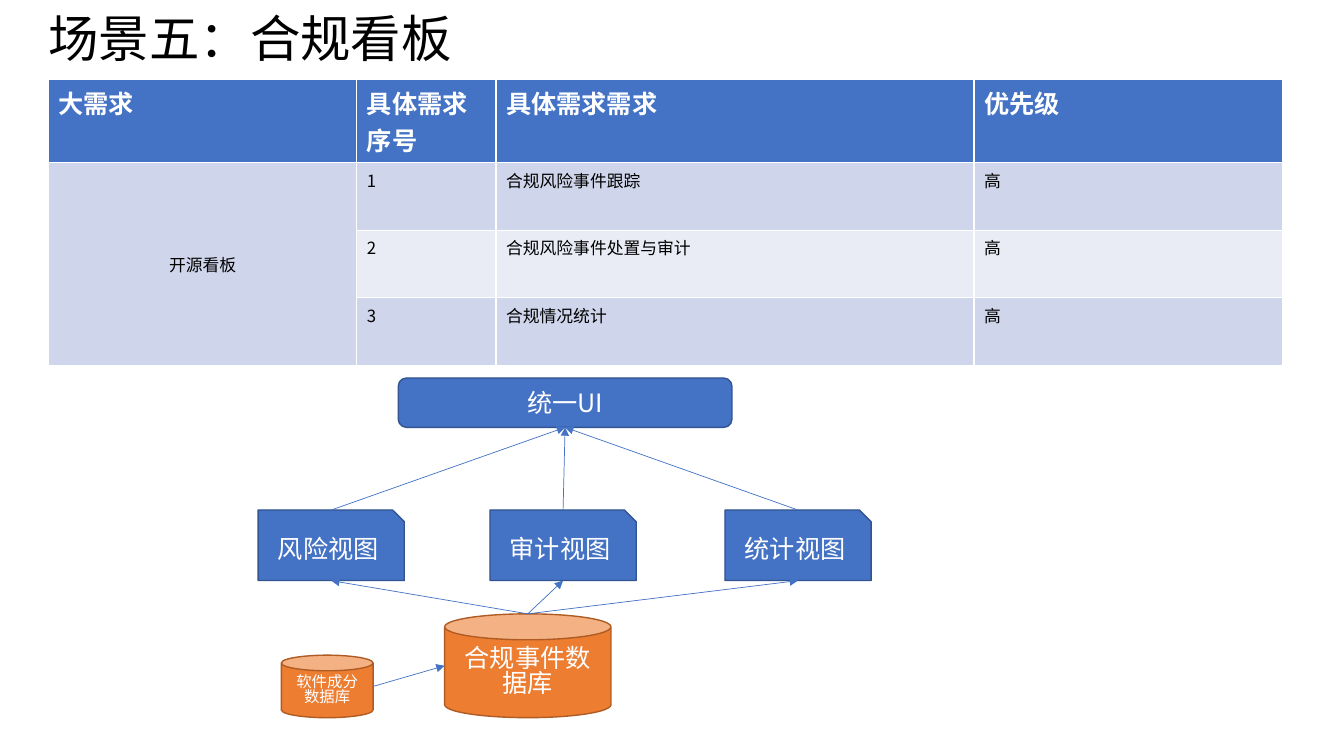
from dataclasses import dataclass

from lxml import etree
from pptx import Presentation
from pptx.dml.color import RGBColor
from pptx.enum import shapes, text
from pptx.oxml import ns
from pptx.util import Inches, Pt


@dataclass(frozen=True)
class Theme:
    """Colours, font and type sizes of the slide."""
    font: str = "Noto Sans CJK SC"
    blue: str = "4472C4"
    blue_edge: str = "325491"
    orange: str = "ED7D31"
    orange_edge: str = "AF5C24"
    bands: tuple = ("CFD5EA", "E9EBF5")
    black: str = "000000"
    white: str = "FFFFFF"
    title: int = 36
    body: int = 18
    cell: int = 12
    small: int = 11


THEME = Theme()
HEADERS = ["大需求", "具体需求序号", "具体需求需求", "优先级"]
NEEDS = ["合规风险事件跟踪", "合规风险事件处置与审计", "合规情况统计"]
VIEWS = [("风险视图", 2.56), ("审计视图", 4.86), ("统计视图", 7.19)]


def rgb(value):
    """Turn a hex string into a colour."""
    return RGBColor.from_string(value)


def write(frame, wording, size, color, align=None, bold=False, spacing=None):
    """Put one formatted paragraph into a text frame."""
    frame.text = wording
    paragraph = frame.paragraphs[0]
    paragraph.alignment = align
    paragraph.line_spacing = spacing
    font = paragraph.font
    font.name, font.size, font.bold = THEME.font, Pt(size), bold
    font.color.rgb = rgb(color)
    latin = paragraph._p.pPr.find(".//" + ns.qn("a:latin"))
    east_asian = etree.Element(ns.qn("a:ea"), typeface=THEME.font)
    latin.addnext(east_asian)


def add_title(slide, wording):
    """Place and format the slide title."""
    title = slide.shapes.title
    title.left, title.top = Inches(0.38), Inches(0.03)
    title.width, title.height = Inches(11.5), Inches(0.76)
    title.text_frame.vertical_anchor = text.MSO_ANCHOR.MIDDLE
    write(title.text_frame, wording, THEME.title, THEME.black,
          text.PP_ALIGN.LEFT, spacing=0.9)


def fill_cell(cell, wording, size, text_color, fill, **style):
    """Fill a table cell and write its wording."""
    cell.fill.solid()
    cell.fill.fore_color.rgb = rgb(fill)
    write(cell.text_frame, wording, size, text_color, **style)


def add_needs(slide):
    """Add the table of requirements."""
    table = slide.shapes.add_table(
        len(NEEDS) + 1, len(HEADERS), Inches(0.48), Inches(0.79),
        Inches(12.24), Inches(2.56)).table
    for column, width in zip(table.columns, (3.06, 1.38, 4.74, 3.06)):
        column.width = Inches(width)
    for row, height in zip(table.rows, (0.55, 0.67, 0.67, 0.67)):
        row.height = Inches(height)
    for column, header in enumerate(HEADERS):
        fill_cell(table.cell(0, column), header, THEME.body, THEME.white,
                  THEME.blue, bold=True)
    for number, need in enumerate(NEEDS, 1):
        band = THEME.bands[(number - 1) % 2]
        for column, wording in enumerate((str(number), need, "高"), 1):
            fill_cell(table.cell(number, column), wording, THEME.cell,
                      THEME.black, band)
    topic = table.cell(1, 0)
    topic.merge(table.cell(len(NEEDS), 0))
    topic.vertical_anchor = text.MSO_ANCHOR.MIDDLE
    fill_cell(topic, "开源看板", THEME.cell, THEME.black, THEME.bands[0],
              align=text.PP_ALIGN.CENTER)


def add_node(slide, kind, wording, box, fill, edge, size=THEME.body, spacing=None):
    """Add one labelled shape of the diagram."""
    node = slide.shapes.add_shape(kind, *map(Inches, box))
    node.shadow.inherit = False
    node.fill.solid()
    node.fill.fore_color.rgb = rgb(fill)
    node.line.color.rgb = rgb(edge)
    node.line.width = Pt(1)
    node.text_frame.word_wrap = True
    node.text_frame.vertical_anchor = text.MSO_ANCHOR.MIDDLE
    write(node.text_frame, wording, size, THEME.white,
          text.PP_ALIGN.CENTER, spacing=spacing)
    return node


def add_database(slide, wording, box, size):
    """Add a database can."""
    return add_node(slide, shapes.MSO_SHAPE.CAN, wording, box, THEME.orange,
                    THEME.orange_edge, size, 0.82)


def side(node, across, down):
    """Give the point at a fraction of a node's width and height."""
    return (node.left + round(node.width * across),
            node.top + round(node.height * down))


def add_arrow(slide, start, end):
    """Add a thin arrow between two points."""
    arrow = slide.shapes.add_connector(
        shapes.MSO_CONNECTOR.STRAIGHT, *start, *end)
    arrow.line.color.rgb = rgb(THEME.blue)
    arrow.line.width = Pt(0.5)
    etree.SubElement(arrow.line._get_or_add_ln(), ns.qn("a:tailEnd"), type="triangle")
    etree.SubElement(arrow._element.spPr, ns.qn("a:effectLst"))
    return arrow


def add_diagram(slide):
    """Add the data flow from the databases to the interface."""
    components = add_database(slide, "软件成分数据库", (2.79, 6.5, 0.91, 0.62), THEME.small)
    events = add_database(slide, "合规事件数据库", (4.41, 6.09, 1.65, 1.03), THEME.body)
    views = [add_node(slide, shapes.MSO_SHAPE.SNIP_1_RECTANGLE, wording,
                      (left, 5.06, 1.45, 0.7), THEME.blue, THEME.blue_edge)
             for wording, left in VIEWS]
    interface = add_node(slide, shapes.MSO_SHAPE.ROUNDED_RECTANGLE, "统一UI",
                         (3.95, 3.75, 3.31, 0.49), THEME.blue, THEME.blue_edge)
    add_arrow(slide, side(components, 1, 0.5), side(events, 0, 0.5))
    for view in views:
        add_arrow(slide, side(events, 0.5, 0), side(view, 0.5, 1))
        rise = add_arrow(slide, side(view, 0.5, 0), side(interface, 0.5, 1))
        rise.end_connect(interface, 2)


def main():
    """Build and save the slide."""
    deck = Presentation()
    deck.slide_width, deck.slide_height = Inches(13.33), Inches(7.5)
    slide = deck.slides.add_slide(deck.slide_layouts.get_by_name("Title Only"))
    add_title(slide, "场景五：合规看板")
    add_needs(slide)
    add_diagram(slide)
    deck.save("out.pptx")


if __name__ == "__main__":
    main()
